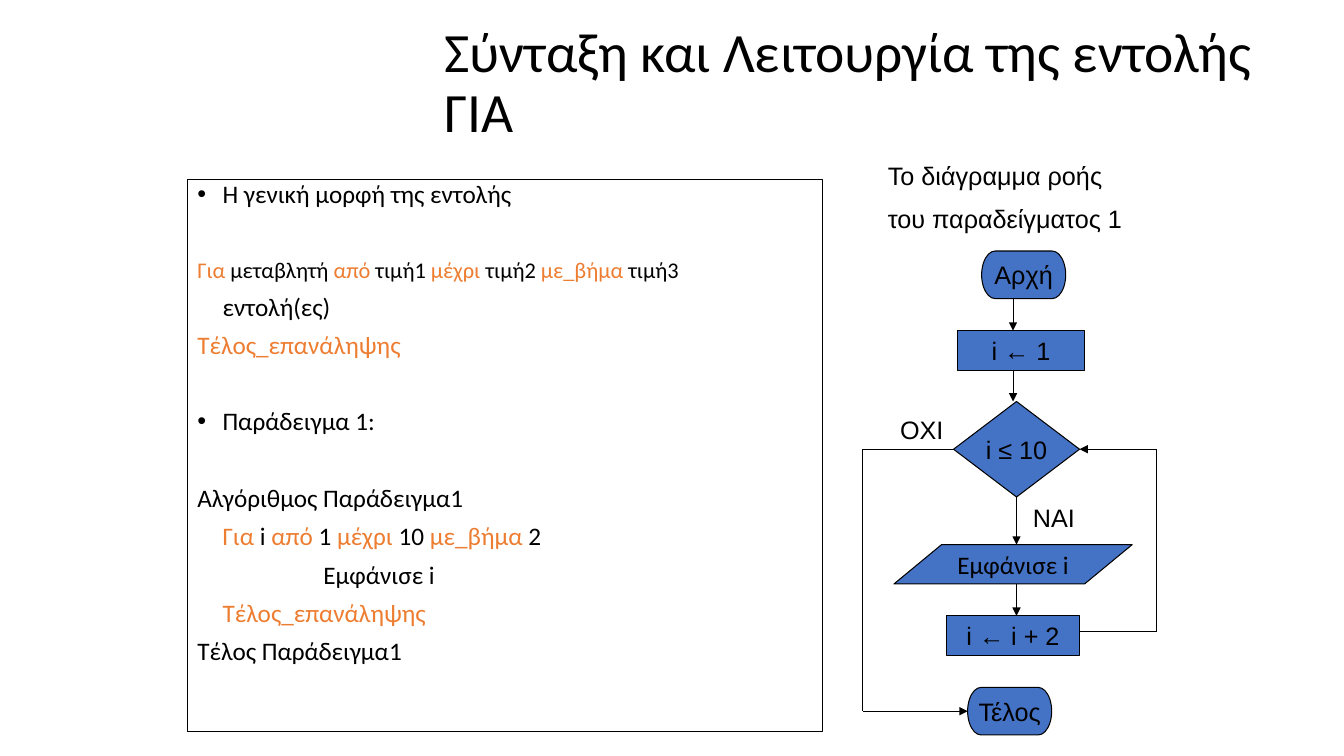
from lxml.etree import SubElement
from pptx import Presentation
from pptx.dml.color import RGBColor
from pptx.enum.shapes import MSO_CONNECTOR, MSO_SHAPE
from pptx.enum.text import MSO_ANCHOR, PP_ALIGN
from pptx.oxml.ns import qn
from pptx.util import Pt

BLACK = RGBColor(0, 0, 0)
BLUE = RGBColor(0x44, 0x72, 0xC4)
ORANGE = RGBColor(0xED, 0x7D, 0x31)

deck = Presentation()
deck.slide_width, deck.slide_height = Pt(960), Pt(540)
slide = deck.slides.add_slide(deck.slide_layouts[6])
shapes = slide.shapes


def write(para, text, size=18, face="Arial", color=BLACK):
    run = para.add_run()
    run.text = text
    run.font.size = Pt(size)
    run.font.name = face
    run.font.color.rgb = color


def label(left, top, width, height, lines):
    box = shapes.add_textbox(Pt(left), Pt(top), Pt(width), Pt(height))
    frame = box.text_frame
    frame.word_wrap = True
    for row, text in enumerate(lines):
        para = frame.add_paragraph() if row else frame.paragraphs[0]
        if row:
            para.space_before = Pt(9)
        write(para, text)


title = shapes.add_textbox(Pt(310.3), Pt(31.7), Pt(612), Pt(56.9))
frame = title.text_frame
frame.word_wrap = True
frame.vertical_anchor = MSO_ANCHOR.MIDDLE
head = frame.paragraphs[0]
head.line_spacing = 0.9
write(head, "Σύνταξη και Λειτουργία της εντολής ΓΙΑ", 39.6, "Calibri")

body = shapes.add_shape(MSO_SHAPE.RECTANGLE, Pt(133.9), Pt(128.2), Pt(453.6), Pt(393.8))
body.shadow.inherit = False
body.fill.background()
body.line.color.rgb = BLACK
body.line.width = Pt(0.25)
frame = body.text_frame
frame.word_wrap = True
frame.vertical_anchor = MSO_ANCHOR.TOP

B, O = BLACK, ORANGE
NEAR, FAR = 10, 37.5
code = [
    (18, True, 0, 18, [("Η γενική μορφή της εντολής", B)]),
    (0, False, FAR, 16, [
        ("Για ", O), ("μεταβλητή", B), (" από ", O), ("τιμή1", B),
        (" μέχρι ", O), ("τιμή2", B), (" με_βήμα ", O), ("τιμή3", B)]),
    (18, False, NEAR, 18, [("εντολή(ες)", B)]),
    (0, False, NEAR, 18, [("Τέλος_επανάληψης", O)]),
    (18, True, FAR, 18, [("Παράδειγμα 1:", B)]),
    (0, False, FAR, 18, [("Αλγόριθμος Παράδειγμα1", B)]),
    (18, False, NEAR, 18, [
        ("Για ", O), ("i", B), (" από ", O), ("1", B), (" μέχρι ", O),
        ("10 ", B), ("με_βήμα ", O), ("2", B)]),
    (90, False, NEAR, 18, [("Εμφάνισε i", B)]),
    (18, False, NEAR, 18, [("Τέλος_επανάληψης", O)]),
    (0, False, NEAR, 18, [("Τέλος Παράδειγμα1", B)]),
]
for row, (dent, dot, gap, size, parts) in enumerate(code):
    para = frame.add_paragraph() if row else frame.paragraphs[0]
    props = para._p.get_or_add_pPr()
    props.set("marL", str(Pt(dent)))
    props.set("indent", str(Pt(-18 if dot else 0)))
    if dot:
        SubElement(props, qn("a:buFont")).set("typeface", "Arial")
        SubElement(props, qn("a:buChar")).set("char", "•")
    para.alignment = PP_ALIGN.LEFT
    para.line_spacing = 0.8
    para.space_before = Pt(gap)
    for text, color in parts:
        write(para, text, size, "Calibri", color)

label(627.1, 110.9, 187.2, 61.2, ["Το διάγραμμα ροής", "του παραδείγματος 1"])
label(730.8, 355, 50.4, 28.8, ["ΝΑΙ"])
label(635.8, 292.3, 49.7, 28.8, ["OXI"])

END = MSO_SHAPE.FLOWCHART_TERMINATOR
STEP = MSO_SHAPE.FLOWCHART_PROCESS
TEST = MSO_SHAPE.FLOWCHART_DECISION
DATA = MSO_SHAPE.FLOWCHART_DATA
nodes = [
    (END, 701.2, 179.3, 60, 34, "Αρχή", "Arial"),
    (STEP, 684, 236.2, 90.7, 28.1, "i ← 1", "Arial"),
    (TEST, 681.1, 286.8, 90, 68.2, "i ≤ 10", "Arial"),
    (DATA, 638.6, 389, 170.2, 28.1, "Εμφάνισε i", "Calibri"),
    (STEP, 676.1, 439.9, 95, 28.1, "i ← i + 2", "Arial"),
    (END, 691.2, 491, 60, 34, "Τέλος", "Arial"),
]
for kind, left, top, width, height, text, face in nodes:
    node = shapes.add_shape(kind, Pt(left), Pt(top), Pt(width), Pt(height))
    node.shadow.inherit = False
    node.fill.solid()
    node.fill.fore_color.rgb = BLUE
    node.line.color.rgb = BLACK
    node.line.width = Pt(0.75)
    frame = node.text_frame
    frame.word_wrap = False
    frame.vertical_anchor = MSO_ANCHOR.MIDDLE
    para = frame.paragraphs[0]
    para.alignment = PP_ALIGN.CENTER
    write(para, text, face=face)

routes = [
    [(723.6, 213.3), (723.6, 236.2)],
    [(723.6, 264.3), (723.6, 286.8)],
    [(726.1, 355), (726.1, 389)],
    [(726.1, 417.1), (726.1, 439.9)],
    [(771.1, 451.4), (825.8, 451.4), (825.8, 320.9), (771.1, 320.9)],
    [(681.1, 320.9), (616.3, 320.9), (616.3, 508), (691.2, 508)],
]
for route in routes:
    for start, stop in zip(route, route[1:]):
        ends = [Pt(num) for num in start + stop]
        line = shapes.add_connector(MSO_CONNECTOR.STRAIGHT, *ends)
        line.line.color.rgb = BLACK
        line.line.width = Pt(0.75)
        if stop == route[-1]:
            SubElement(line.line._get_or_add_ln(), qn("a:tailEnd")).set("type", "triangle")
        SubElement(line._element.spPr, qn("a:effectLst"))

deck.save("out.pptx")
